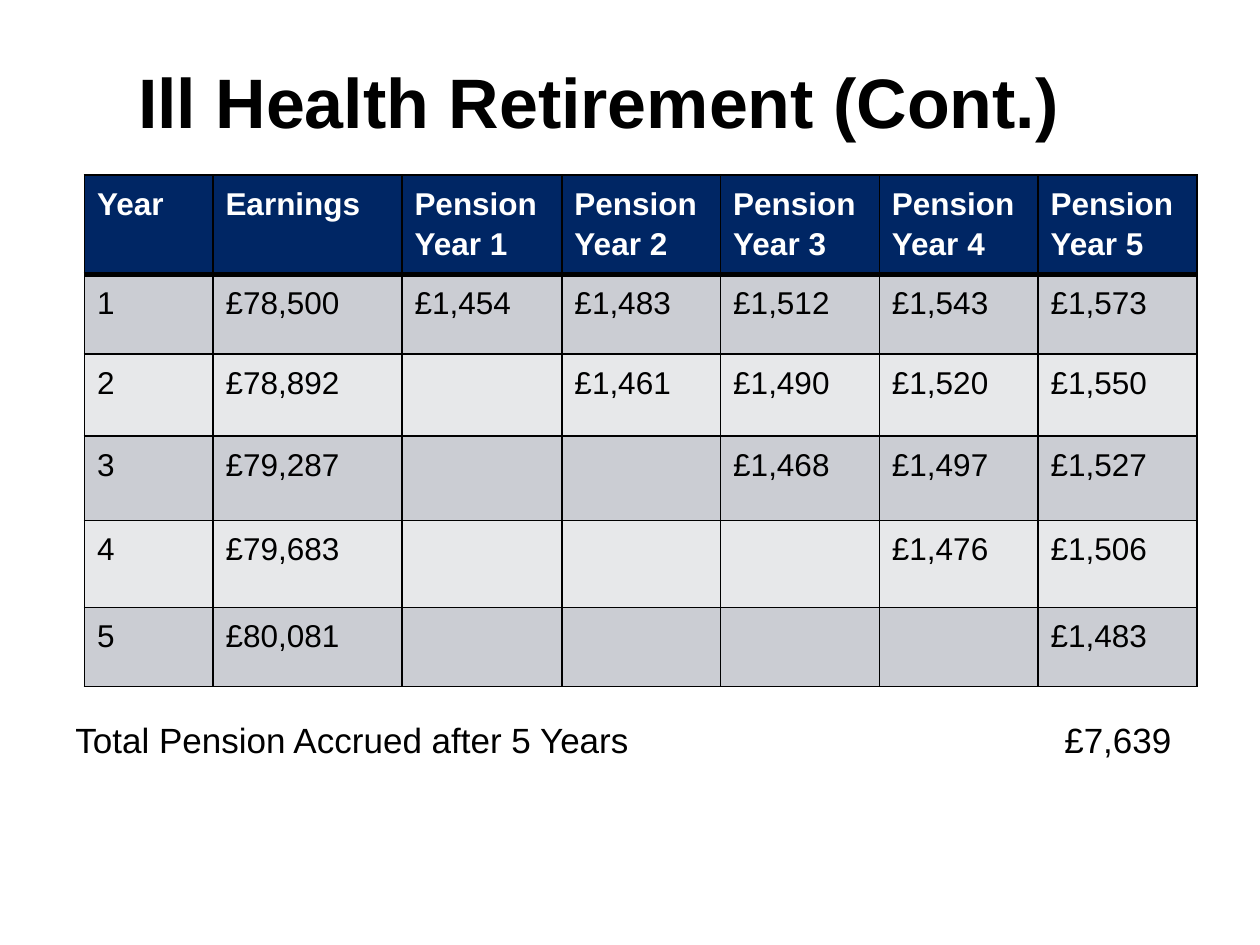
import dataclasses

import lxml.etree
import pptx
import pptx.dml.color
import pptx.enum.text
import pptx.oxml.ns
import pptx.util

Inches = pptx.util.Inches
FONT = "Arial"
COLORS = {
    "text": "000000",
    "header_text": "FFFFFF",
    "header": "002664",
    "dark_band": "CBCDD3",
    "light_band": "E7E8EA",
    "border": "000000",
}
COLUMN_WIDTHS = [1.02, 1.5, 1.27] + [1.26] * 4
ROW_HEIGHTS = [0.79, 0.63, 0.65, 0.67, 0.69, 0.63]
YEAR_COUNT = 5


@dataclasses.dataclass
class PensionYear:
    earnings: str
    pensions: list[str]  # from the year earned up to the last year


@dataclasses.dataclass
class TextStyle:
    size: int
    color: str = "text"
    bold: bool = False


PENSION_YEARS = [
    PensionYear("£78,500", ["£1,454", "£1,483", "£1,512", "£1,543", "£1,573"]),
    PensionYear("£78,892", ["£1,461", "£1,490", "£1,520", "£1,550"]),
    PensionYear("£79,287", ["£1,468", "£1,497", "£1,527"]),
    PensionYear("£79,683", ["£1,476", "£1,506"]),
    PensionYear("£80,081", ["£1,483"]),
]
HEADER_STYLE = TextStyle(18, "header_text", True)
BODY_STYLE = TextStyle(18)


def rgb(name: str) -> pptx.dml.color.RGBColor:
    return pptx.dml.color.RGBColor.from_string(COLORS[name])


def add_run(paragraph, text: str, style: TextStyle) -> None:
    run = paragraph.add_run()
    run.text = text
    run.font.name = FONT
    run.font.size = pptx.util.Pt(style.size)
    run.font.bold = style.bold
    run.font.color.rgb = rgb(style.color)


def add_text_box(slide, left: float, top: float, width: float, height: float):
    text_box = slide.shapes.add_textbox(
        Inches(left), Inches(top), Inches(width), Inches(height))
    text_box.text_frame.word_wrap = True
    return text_box.text_frame


def add_child(parent, tag: str, **attributes: str):
    return lxml.etree.SubElement(parent, pptx.oxml.ns.qn(tag), **attributes)


def set_borders(cell, top: float, bottom: float) -> None:
    properties = cell._tc.get_or_add_tcPr()
    for side, width in (("L", 1), ("R", 1), ("T", top), ("B", bottom)):
        line = add_child(properties, f"a:ln{side}", w=str(pptx.util.Pt(width)))
        fill = add_child(line, "a:solidFill")
        add_child(fill, "a:srgbClr", val=COLORS["border"])


def fill_cell(cell, text: str, style: TextStyle, fill: str) -> None:
    cell.fill.solid()
    cell.fill.fore_color.rgb = rgb(fill)
    for index, line in enumerate(text.split("\n")):
        frame = cell.text_frame
        paragraph = frame.add_paragraph() if index else frame.paragraphs[0]
        paragraph.line_spacing = 1.15
        if line:
            add_run(paragraph, line, style)


def add_pension_table(slide) -> None:
    headings = ["Year", "Earnings"]
    headings += [f"Pension\nYear {year}" for year in range(1, YEAR_COUNT + 1)]
    rows = [headings]
    for number, year in enumerate(PENSION_YEARS, start=1):
        rows.append([str(number), year.earnings] + [""] * (number - 1) + year.pensions)

    table = slide.shapes.add_table(
        len(rows), len(headings), Inches(0.67), Inches(1.39),
        Inches(sum(COLUMN_WIDTHS)), Inches(sum(ROW_HEIGHTS))).table
    for column, width in zip(table.columns, COLUMN_WIDTHS):
        column.width = Inches(width)
    for row, height in zip(table.rows, ROW_HEIGHTS):
        row.height = Inches(height)

    for row_index, texts in enumerate(rows):
        is_header = row_index == 0
        band = "dark_band" if row_index % 2 else "light_band"
        for column_index, text in enumerate(texts):
            cell = table.cell(row_index, column_index)
            # A thick rule separates the header from the first year
            set_borders(cell, top=3 if row_index == 1 else 1,
                        bottom=3 if is_header else 1)
            fill_cell(cell, text, HEADER_STYLE if is_header else BODY_STYLE,
                      "header" if is_header else band)


def add_title(slide) -> None:
    frame = add_text_box(slide, 0.5, 0.17, 8.5, 1.25)
    frame.vertical_anchor = pptx.enum.text.MSO_ANCHOR.MIDDLE
    paragraph = frame.paragraphs[0]
    paragraph.alignment = pptx.enum.text.PP_ALIGN.CENTER
    add_run(paragraph, "Ill Health Retirement (Cont.)", TextStyle(40, bold=True))


def add_total(slide) -> None:
    paragraph = add_text_box(slide, 0.5, 5.65, 9.33, 0.45).paragraphs[0]
    # The amount ends at a right-aligned tab stop
    tabs = add_child(paragraph._p.get_or_add_pPr(), "a:tabLst")
    add_child(tabs, "a:tab", pos=str(Inches(8.7)), algn="r")
    add_run(paragraph, "Total Pension Accrued after 5 Years\t£7,639", TextStyle(20))


def main() -> None:
    presentation = pptx.Presentation()
    presentation.slide_width = Inches(10)
    presentation.slide_height = Inches(7.5)
    slide = presentation.slides.add_slide(presentation.slide_layouts[6])
    add_title(slide)
    add_total(slide)
    add_pension_table(slide)
    presentation.save("out.pptx")


if __name__ == "__main__":
    main()
